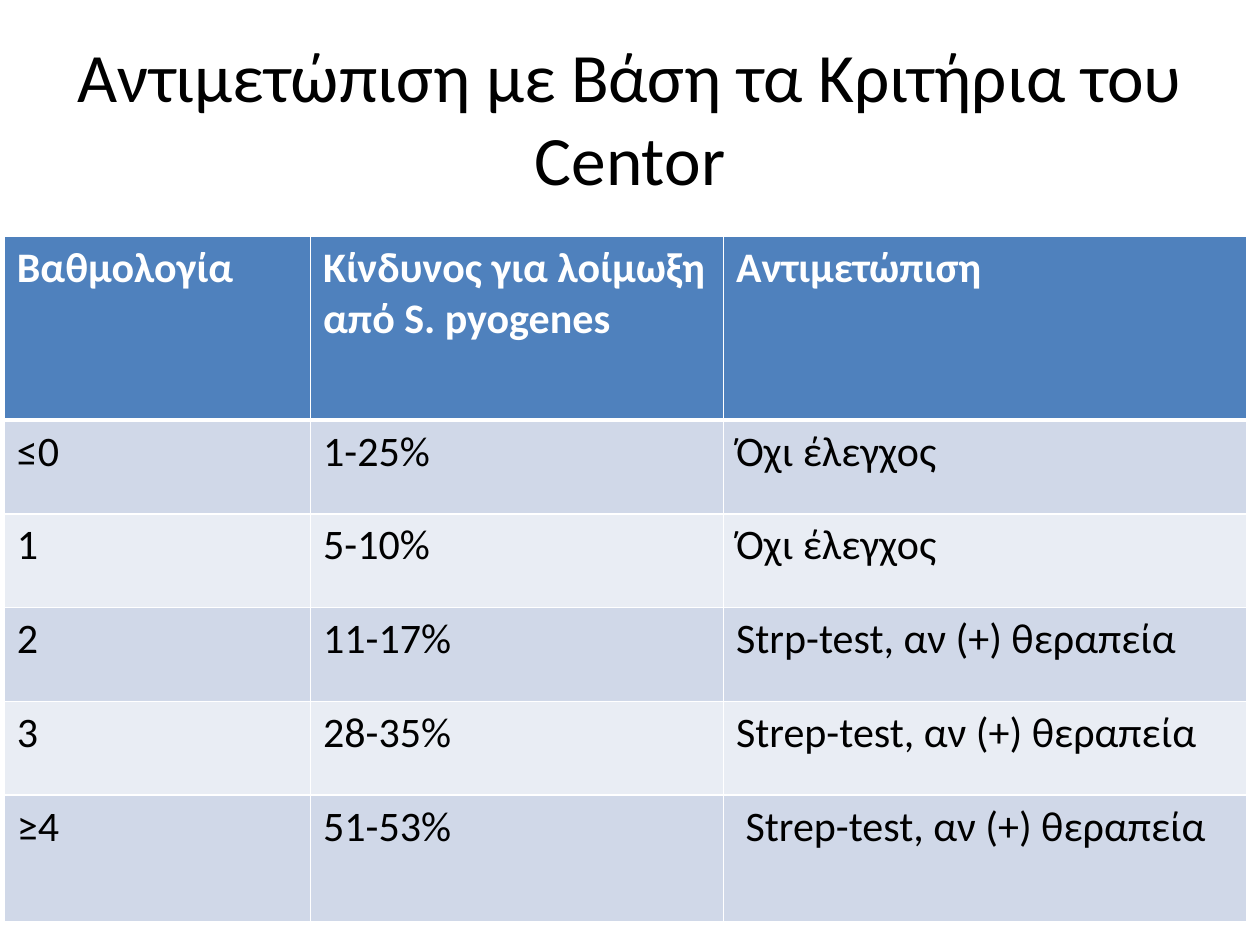
import dataclasses

import lxml.etree
import pptx
import pptx.dml.color
import pptx.enum.text
import pptx.oxml.ns
import pptx.util

Pt = pptx.util.Pt


@dataclasses.dataclass(frozen=True)
class Theme:
    font: str = "Calibri"
    ink: str = "000000"
    paper: str = "FFFFFF"
    head: str = "4F81BD"
    bands: tuple = ("D0D8E8", "E9EDF4")
    title: float = 39.6
    body: float = 24
    thin: float = 1
    thick: float = 3


def rgb(code):
    return pptx.dml.color.RGBColor.from_string(code)


class Deck:
    def __init__(self, theme, wide, high):
        self.theme = theme
        self.file = pptx.Presentation()
        self.file.slide_width, self.file.slide_height = Pt(wide), Pt(high)
        self.slide = self.file.slides.add_slide(self.file.slide_layouts[6])

    def style(self, frame, size, color, bold=False):
        for para in frame.paragraphs:
            for run in para.runs:
                font = run.font
                font.name, font.size, font.bold = self.theme.font, Pt(size), bold
                font.color.rgb = rgb(color)

    def title(self, text, left, top, wide, high):
        box = self.slide.shapes.add_textbox(Pt(left), Pt(top), Pt(wide), Pt(high))
        frame = box.text_frame
        frame.word_wrap = True
        frame.vertical_anchor = pptx.enum.text.MSO_ANCHOR.MIDDLE
        frame.text = text
        frame.paragraphs[0].alignment = pptx.enum.text.PP_ALIGN.CENTER
        self.style(frame, self.theme.title, self.theme.ink)

    def edge(self, cell, side, width):
        """Draw one cell border; sides must come in the order L, R, T, B."""
        qn = pptx.oxml.ns.qn
        props = cell._tc.get_or_add_tcPr()
        line = lxml.etree.SubElement(props, qn(f"a:ln{side}"), w=str(Pt(width)))
        fill = lxml.etree.SubElement(line, qn("a:solidFill"))
        lxml.etree.SubElement(fill, qn("a:srgbClr"), val=self.theme.paper)

    def cell(self, cell, text, row):
        theme = self.theme
        head = row == 0
        for side in "LRTB":
            thick = (row, side) in ((0, "B"), (1, "T"))
            self.edge(cell, side, theme.thick if thick else theme.thin)
        cell.fill.solid()
        cell.fill.fore_color.rgb = rgb(theme.head if head else theme.bands[(row - 1) % 2])
        cell.text_frame.text = text
        self.style(cell.text_frame, theme.body, theme.paper if head else theme.ink, head)

    def table(self, rows, left, top, wides, highs):
        grid = self.slide.shapes.add_table(
            len(rows), len(wides), Pt(left), Pt(top), Pt(sum(wides)), Pt(sum(highs))
        ).table
        for col, wide in zip(grid.columns, wides):
            col.width = Pt(wide)
        for row, high in zip(grid.rows, highs):
            row.height = Pt(high)
        for r, texts in enumerate(rows):
            for c, text in enumerate(texts):
                self.cell(grid.cell(r, c), text, r)


ROWS = [
    ("Βαθμολογία", "Κίνδυνος για λοίμωξη από S. pyogenes", "Αντιμετώπιση"),
    ("≤0", "1-25%", "Όχι έλεγχος"),
    ("1", "5-10%", "Όχι έλεγχος"),
    ("2", "11-17%", "Strp-test, αν (+) θεραπεία"),
    ("3", "28-35%", "Strep-test, αν (+) θεραπεία"),
    ("≥4", "51-53%", " Strep-test, αν (+) θεραπεία"),
]


def main():
    deck = Deck(Theme(), 720, 540)
    deck.title("Αντιμετώπιση με Βάση τα Κριτήρια του Centor", 36, 21.6, 648, 90)
    deck.table(ROWS, 2.5, 135, (175, 236, 299), (105, *[53.6] * 4, 72.6))
    deck.file.save("out.pptx")


if __name__ == "__main__":
    main()
